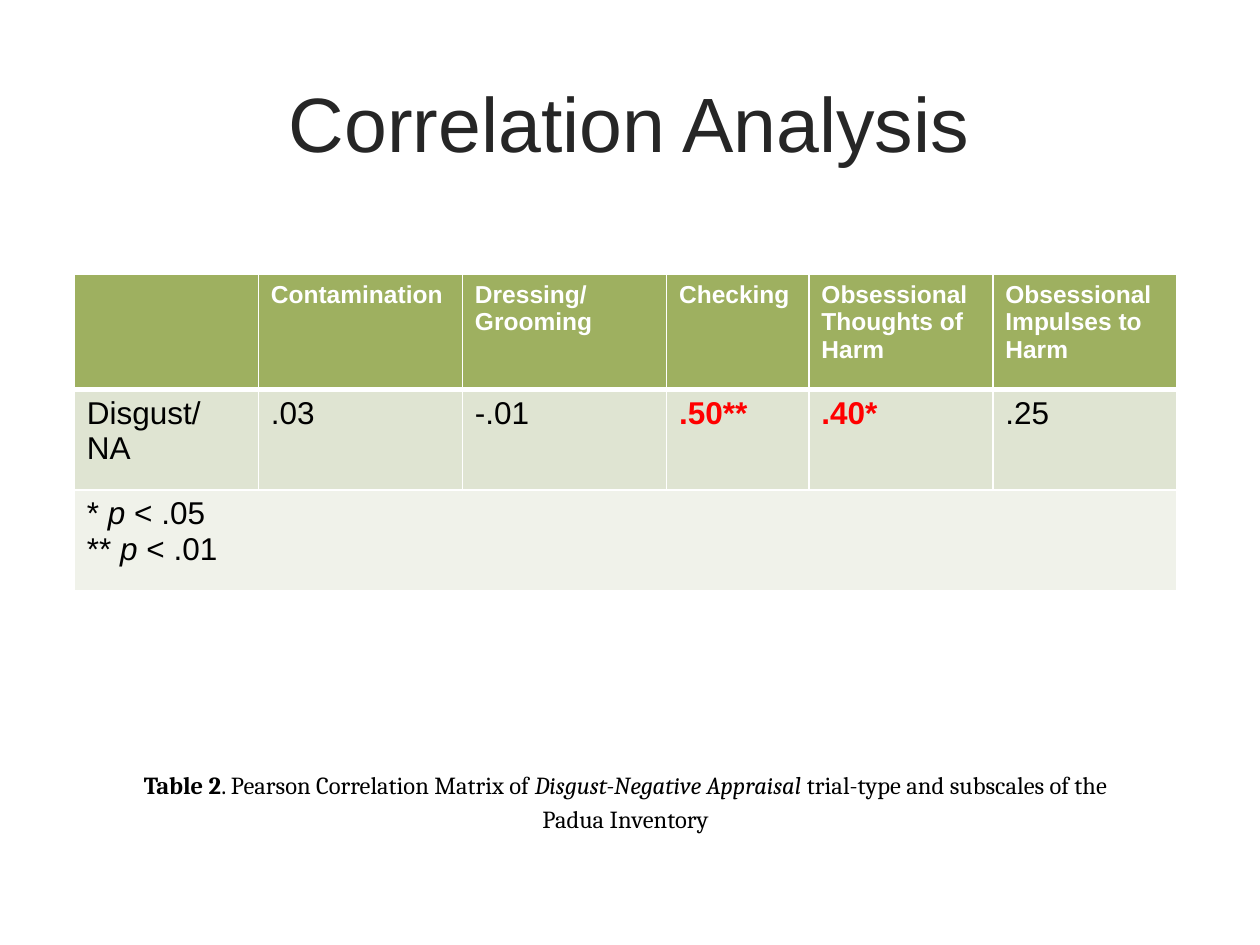
import pptx
import pptx.util
import pptx.dml.color
import pptx.enum.text
import pptx.oxml
import pptx.oxml.ns
from pptx.util import Inches

COLORS = {"title": "262626", "text": "000000", "white": "FFFFFF", "strong": "FF0000",
          "header": "9EB060", "band": "DFE4D2", "note": "F0F2EA"}
TITLE = {"name": "Arial", "size": 44, "color": "title"}
HEADING = {"name": "Arial", "size": 14, "color": "white", "bold": True}
BODY = {"name": "Arial", "size": 18, "color": "text", "bold": False}
SIGNIFICANT = {**BODY, "color": "strong", "bold": True}
CAPTION = {"name": "Cambria", "size": 14, "color": "text", "bold": False}

COLUMN_WIDTHS = [1.46, 1.62, 1.62, 1.13, 1.46, 1.46]
ROW_HEIGHTS = [0.91, 0.8, 0.8]
SUBSCALES = ["", "Contamination", "Dressing/\nGrooming", "Checking",
             "Obsessional Thoughts of Harm", "Obsessional Impulses to Harm"]
CORRELATIONS = ["Disgust/ NA", ".03", "-.01", ".50**", ".40*", ".25"]


def rgb(key):
    return pptx.dml.color.RGBColor.from_string(COLORS[key])


def add_run(paragraph, text, style):
    run = paragraph.add_run()
    run.text = text
    for attribute, value in style.items():
        if attribute == "color":
            run.font.color.rgb = rgb(value)
        else:
            setattr(run.font, attribute, pptx.util.Pt(value) if attribute == "size" else value)


def write(frame, paragraphs):
    """Fill a text frame with paragraphs, each a list of (text, style) runs."""
    for index, runs in enumerate(paragraphs):
        paragraph = frame.add_paragraph() if index else frame.paragraphs[0]
        for text, style in runs:
            add_run(paragraph, text, style)


def add_centred_text(slide, box, runs, anchor, line_spacing):
    frame = slide.shapes.add_textbox(*map(Inches, box)).text_frame
    frame.word_wrap = True
    frame.vertical_anchor = anchor
    write(frame, [runs])
    frame.paragraphs[0].alignment = pptx.enum.text.PP_ALIGN.CENTER
    frame.paragraphs[0].line_spacing = line_spacing


def add_title(slide, box):
    add_centred_text(slide, box, [("Correlation Analysis", TITLE)],
                     pptx.enum.text.MSO_ANCHOR.MIDDLE, 1.0)


def add_caption(slide, box):
    runs = [("Table 2", {**CAPTION, "bold": True}),
            (". Pearson Correlation Matrix of ", CAPTION),
            ("Disgust-Negative Appraisal", {**CAPTION, "italic": True}),
            (" trial-type and subscales of the Padua Inventory", CAPTION)]
    add_centred_text(slide, box, runs, pptx.enum.text.MSO_ANCHOR.TOP, 1.15)


def format_cell(cell, fill, widths):
    """Set the fill and white borders, whose widths in points are given by side."""
    cell.fill.solid()
    cell.fill.fore_color.rgb = rgb(fill)
    properties = cell._tc.get_or_add_tcPr()
    for position, side in enumerate("LRTB"):
        border = pptx.oxml.parse_xml(
            f'<a:ln{side} {pptx.oxml.ns.nsdecls("a")} w="{pptx.util.Pt(widths.get(side, 1))}">'
            f'<a:solidFill><a:srgbClr val="{COLORS["white"]}"/></a:solidFill></a:ln{side}>')
        properties.insert(position, border)


def add_correlation_table(slide, box):
    table = slide.shapes.add_table(len(ROW_HEIGHTS), len(COLUMN_WIDTHS),
                                   *map(Inches, box)).table
    for column, width in zip(table.columns, COLUMN_WIDTHS):
        column.width = Inches(width)
    for row, height in zip(table.rows, ROW_HEIGHTS):
        row.height = Inches(height)

    # Subscale headings and their correlations
    for index, (subscale, correlation) in enumerate(zip(SUBSCALES, CORRELATIONS)):
        heading, value, note = (table.cell(row, index) for row in range(3))
        if subscale:
            write(heading.text_frame, [[(line, HEADING)] for line in subscale.split("\n")])
        value_style = SIGNIFICANT if correlation.endswith("*") else BODY
        write(value.text_frame, [[(correlation, value_style)]])
        format_cell(heading, "header", {"B": 3})
        format_cell(value, "band", {"T": 3})
        format_cell(note, "note", {})

    # Significance levels across the full width
    levels = table.cell(2, 0)
    levels.merge(table.cell(2, len(COLUMN_WIDTHS) - 1))
    write(levels.text_frame,
          [[(f"{mark} ", BODY), ("p", {**BODY, "italic": True}), (f" < {level}", BODY)]
           for mark, level in [("*", ".05"), ("**", ".01")]])


def main():
    deck = pptx.Presentation()
    deck.slide_width, deck.slide_height = Inches(10), Inches(7.5)
    slide = deck.slides.add_slide(deck.slide_layouts[6])
    add_title(slide, (0.79, 0.34, 8.41, 1.25))
    add_correlation_table(slide, (0.59, 2.18, sum(COLUMN_WIDTHS), sum(ROW_HEIGHTS)))
    add_caption(slide, (0.83, 6.03, 8.27, 0.95))
    deck.save("out.pptx")


if __name__ == "__main__":
    main()
